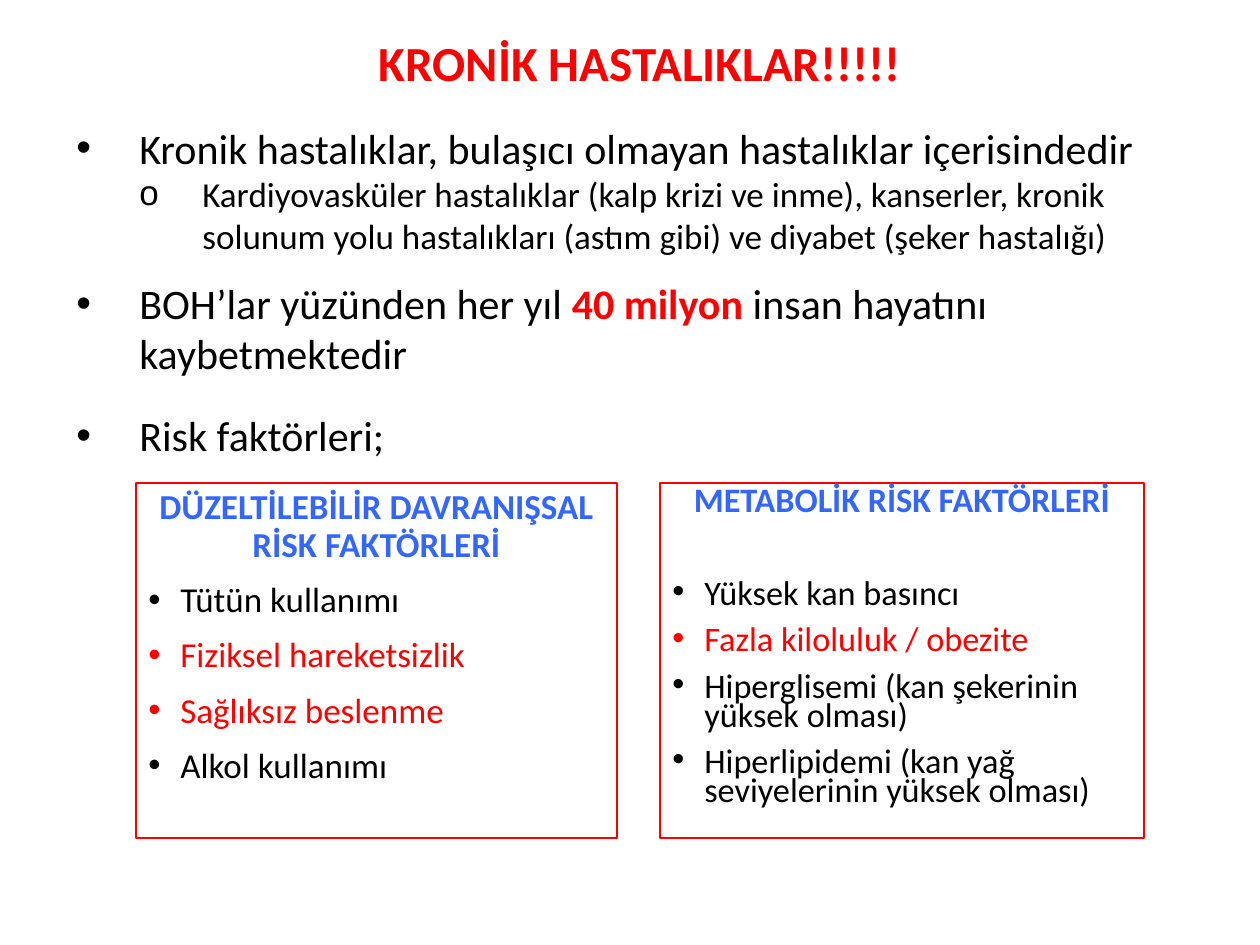
from lxml.etree import SubElement
from pptx import Presentation
from pptx.dml.color import RGBColor
from pptx.enum.shapes import MSO_SHAPE
from pptx.enum.text import MSO_ANCHOR, PP_ALIGN
from pptx.oxml.ns import qn
from pptx.util import Pt

PX = 914400 // 126
COLORS = {"text": "000000", "accent": "FF0000", "heading": "3366FF"}

TITLE = "KRONİK HASTALIKLAR!!!!!"
# Each point: level, space before, space after, runs of (text, color, bold)
POINTS = [
    (0, 0, 0, [("Kronik hastalıklar, bulaşıcı olmayan hastalıklar içerisindedir", "text", False)]),
    (1, 0, 0, [("Kardiyovasküler hastalıklar (kalp krizi ve inme), kanserler, kronik solunum "
                "yolu hastalıkları (astım gibi) ve diyabet (şeker hastalığı)", "text", False)]),
    (0, 12, 6, [("BOH’lar yüzünden her yıl ", "text", False),
                ("40 milyon ", "accent", True),
                ("insan hayatını kaybetmektedir", "text", False)]),
    (0, 12, 6, [("Risk faktörleri;", "text", False)]),
]
LEVELS = [{"size": 24, "bullet": "•"}, {"size": 20, "bullet": "o"}]
PANELS = [
    {"box": (136, 483, 481, 355), "size": 20, "spacing": 0.9, "heading_after": 0,
     "heading": "DÜZELTİLEBİLİR DAVRANIŞSAL RİSK FAKTÖRLERİ",
     "factors": [("Tütün kullanımı", "text"), ("Fiziksel hareketsizlik", "accent"),
                 ("Sağlıksız beslenme", "accent"), ("Alkol kullanımı", "text")]},
    {"box": (660, 483, 484, 355), "size": 19.6, "spacing": 0.7, "heading_after": 27,
     "heading": "METABOLİK RİSK FAKTÖRLERİ",
     "factors": [("Yüksek kan basıncı", "text"), ("Fazla kiloluluk / obezite", "accent"),
                 ("Hiperglisemi (kan şekerinin yüksek olması)", "text"),
                 ("Hiperlipidemi (kan yağ seviyelerinin yüksek olması)", "text")]},
]


def color(name):
    return RGBColor.from_string(COLORS[name])


def emu(box):
    return [length * PX for length in box]


def add_text_box(slide, box):
    frame = slide.shapes.add_textbox(*emu(box)).text_frame
    frame.word_wrap = True
    return frame


def add_bullet(paragraph, character, margin, hanging):
    properties = paragraph._p.get_or_add_pPr()
    properties.set("marL", str(margin * PX))
    properties.set("indent", str(-hanging * PX))
    SubElement(properties, qn("a:buFont")).set("typeface", "Arial")
    SubElement(properties, qn("a:buChar")).set("char", character)


def add_paragraph(frame, runs, size, bullet=None, **formats):
    """Fill the empty first paragraph or append one; bullet is (character, margin, hanging)."""
    first = frame.paragraphs[0]
    paragraph = frame.add_paragraph() if first.runs else first
    if bullet:
        add_bullet(paragraph, *bullet)
    for name, value in formats.items():
        setattr(paragraph, name, value)
    for text, color_name, bold in runs:
        run = paragraph.add_run()
        run.text = text
        for name, value in {"name": "Calibri", "size": Pt(size), "bold": bold}.items():
            setattr(run.font, name, value)
        run.font.color.rgb = color(color_name)


def add_panel(slide, panel):
    shape = slide.shapes.add_shape(MSO_SHAPE.RECTANGLE, *emu(panel["box"]))
    shape.shadow.inherit = False
    shape.fill.background()
    shape.line.color.rgb = color("accent")
    shape.line.width = Pt(1.5)
    frame = shape.text_frame
    frame.word_wrap = True
    frame.vertical_anchor = MSO_ANCHOR.TOP
    size, spacing = panel["size"], panel["spacing"]
    add_paragraph(frame, [(panel["heading"], "heading", True)], size,
                  alignment=PP_ALIGN.CENTER, line_spacing=spacing,
                  space_after=Pt(panel["heading_after"]))
    for text, color_name in panel["factors"]:
        add_paragraph(frame, [(text, color_name, False)], size, ("•", 32, 32),
                      alignment=PP_ALIGN.LEFT, line_spacing=spacing, space_before=Pt(10))


def main():
    presentation = Presentation()
    presentation.slide_width, presentation.slide_height = 1260 * PX, 945 * PX
    slide = presentation.slides.add_slide(presentation.slide_layouts[6])

    points = add_text_box(slide, (64, 116, 1150, 354))
    for level, before, after, runs in POINTS:
        style = LEVELS[level]
        add_paragraph(points, runs, style["size"], (style["bullet"], 63 * (level + 1), 63),
                      level=level, space_before=Pt(before), space_after=Pt(after))
    for panel in PANELS:
        add_panel(slide, panel)
    title = add_text_box(slide, (193, 26, 893, 72))
    add_paragraph(title, [(TITLE, "accent", True)], 28, alignment=PP_ALIGN.CENTER)

    presentation.save("out.pptx")


if __name__ == "__main__":
    main()
